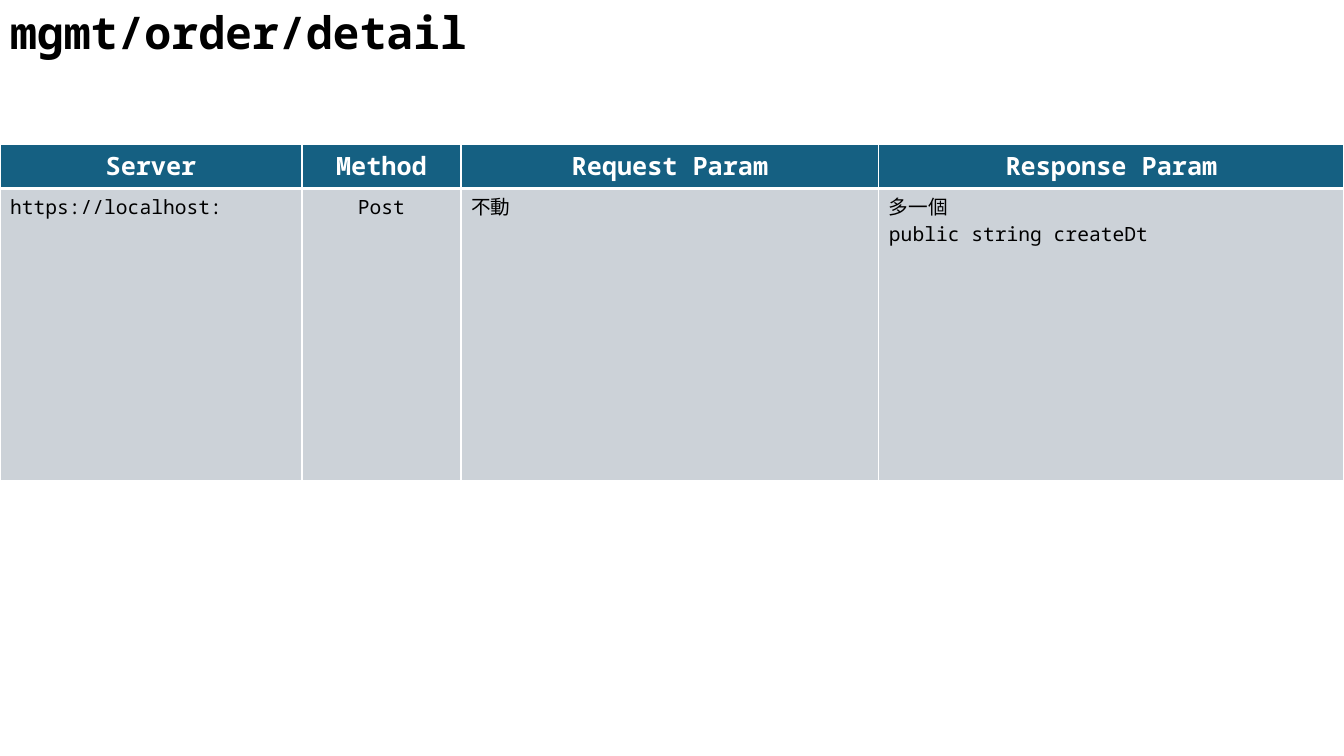
from lxml import etree
from pptx import Presentation, util as u
from pptx.dml.color import RGBColor
from pptx.enum import text
from pptx.oxml.ns import qn

SCALE = 914400 / 100.8
FONT = "Noto Sans Mono"
HUES = {"ink": "000000", "paper": "FFFFFF", "head": "156082", "body": "CCD2D8"}
LEFT, MID = text.PP_ALIGN.LEFT, text.PP_ALIGN.CENTER

WIDTHS = [302, 159, 418, 465]
HEIGHTS = [40, 292]
HEADS = ["Server", "Method", "Request Param", "Response Param"]
CALL = ["https://localhost:", "Post", "不動", "多一個\npublic string createDt"]
SIDES = [LEFT, MID, LEFT, LEFT]


def px(n):
    return u.Emu(round(n * SCALE))


def hue(name):
    return RGBColor.from_string(HUES[name])


def write(frame, words, size=14, bold=False, color="ink", align=LEFT):
    frame.text = words
    for para in frame.paragraphs:
        para.alignment = align
        for run in para.runs:
            font = run.font
            font.name, font.size, font.bold = FONT, u.Pt(size), bold
            font.color.rgb = hue(color)
            east = etree.SubElement(run._r.get_or_add_rPr(), qn("a:ea"))
            east.set("typeface", FONT)


def edge(cell, **sides):
    props = cell._tc.get_or_add_tcPr()
    for spot, (side, width) in enumerate(sides.items()):
        line = etree.Element(qn("a:ln" + side), w=str(u.Pt(width)))
        fill = etree.SubElement(line, qn("a:solidFill"))
        etree.SubElement(fill, qn("a:srgbClr"), val=HUES["paper"])
        props.insert(spot, line)


def title(slide, words):
    box = slide.shapes.title
    box.left, box.top, box.width, box.height = px(0), px(0), px(953), px(65)
    frame = box.text_frame
    frame.vertical_anchor = text.MSO_ANCHOR.TOP
    frame.auto_size = text.MSO_AUTO_SIZE.NONE
    write(frame, words, size=32, bold=True)


def grid(slide):
    table = slide.shapes.add_table(
        2, len(WIDTHS), px(0), px(144), px(sum(WIDTHS)), px(sum(HEIGHTS))).table
    for col, width in zip(table.columns, WIDTHS):
        col.width = px(width)
    for row, height in zip(table.rows, HEIGHTS):
        row.height = px(height)
    for i, (head, call, side) in enumerate(zip(HEADS, CALL, SIDES)):
        top, low = table.cell(0, i), table.cell(1, i)
        write(top.text_frame, head, size=18, bold=True, color="paper", align=MID)
        write(low.text_frame, call, align=side)
        for cell, name in ((top, "head"), (low, "body")):
            cell.fill.solid()
            cell.fill.fore_color.rgb = hue(name)
        edge(top, L=1, R=1, T=1, B=3)
        edge(low, L=1, R=1, T=3, B=1)


def main():
    deck = Presentation()
    deck.slide_width, deck.slide_height = px(1344), px(756)
    slide = deck.slides.add_slide(deck.slide_layouts[5])
    title(slide, "mgmt/order/detail")
    grid(slide)
    deck.save("out.pptx")


if __name__ == "__main__":
    main()
